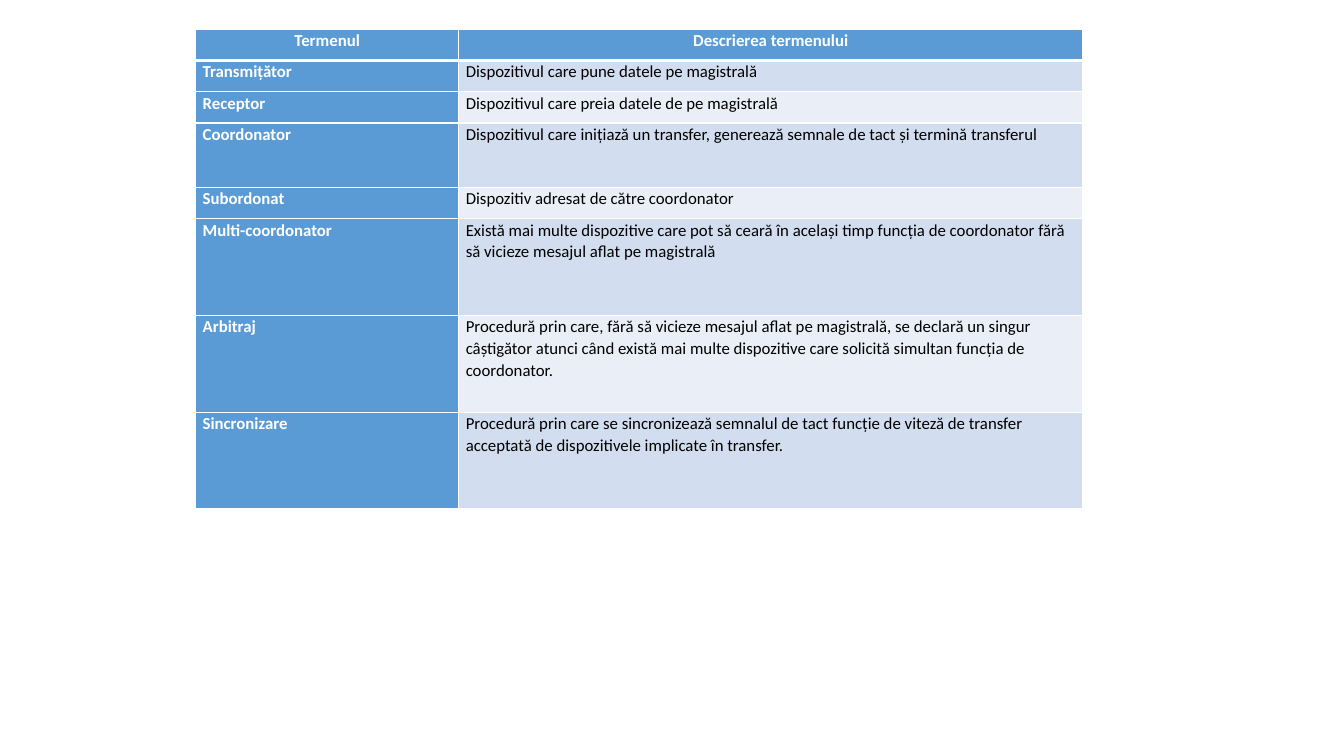
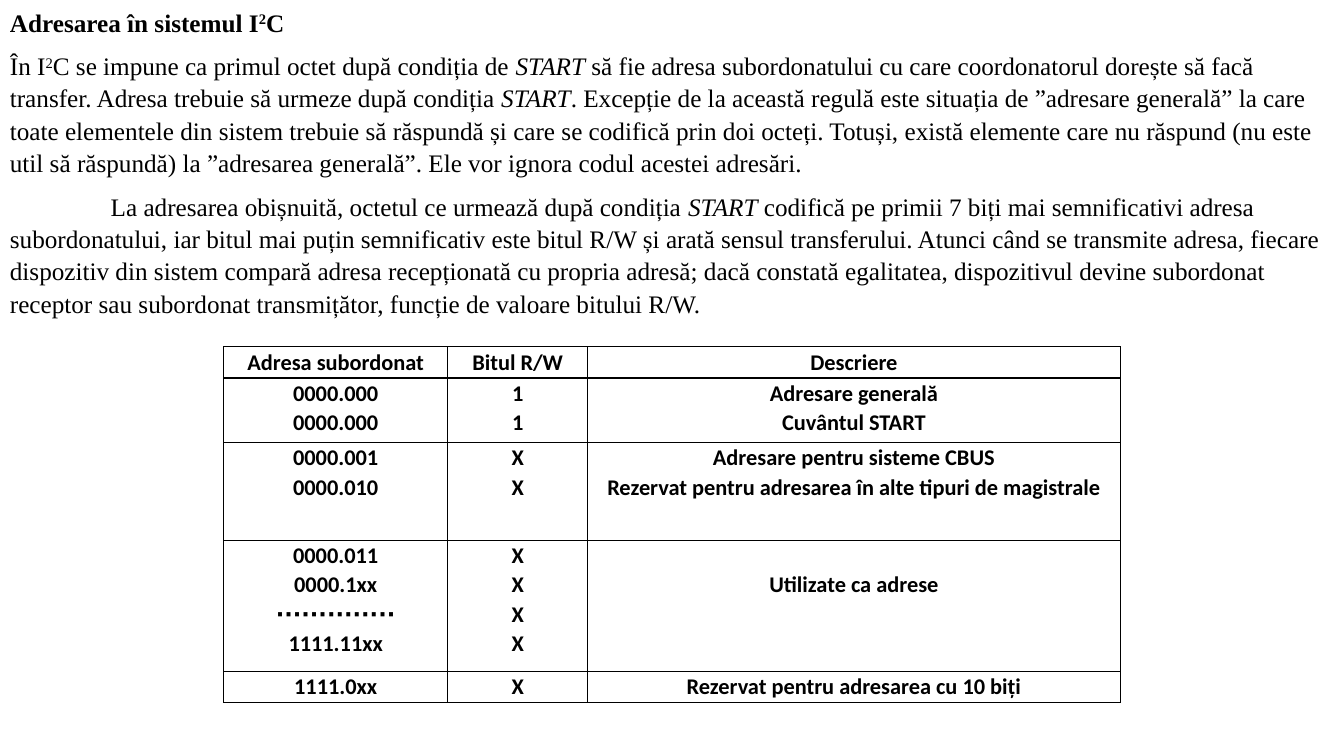
import dataclasses
import typing

import lxml.etree
import pptx
import pptx.dml.color
import pptx.enum.text
import pptx.oxml.ns
import pptx.util

Inches = pptx.util.Inches
Pt = pptx.util.Pt
CENTER = pptx.enum.text.PP_ALIGN.CENTER
LEFT = pptx.enum.text.PP_ALIGN.LEFT

COLORS = {
    "black": "000000",
    "white": "FFFFFF",
    "header": "5B9BD5",
    "band_dark": "D2DEEF",
    "band_light": "EAEFF7",
}
LINE_SPACING = 1.07
PROSE = {"name": "Times New Roman", "size": Pt(18)}
TERM_FONT = {"name": "Calibri", "size": Pt(12)}
ADDRESS_FONT = {"name": "Calibri", "size": Pt(16), "bold": True}
CELL_MARGINS = {
    "margin_left": Inches(0.07),
    "margin_right": Inches(0.07),
    "margin_top": 0,
    "margin_bottom": 0,
}


@dataclasses.dataclass(frozen=True)
class Span:
    text: str
    italic: bool = False
    raised: bool = False


@dataclasses.dataclass(frozen=True)
class Row:
    height: float
    cells: tuple[str, ...]


TERMS = (
    Row(0.31, ("Termenul", "Descrierea termenului")),
    Row(0.31, ("Transmițător", "Dispozitivul care pune datele pe magistrală")),
    Row(0.31, ("Receptor", "Dispozitivul care preia datele de pe magistrală")),
    Row(0.64, ("Coordonator", "Dispozitivul care inițiază un transfer, generează "
               "semnale de tact și termină transferul")),
    Row(0.31, ("Subordonat", "Dispozitiv adresat de către coordonator")),
    Row(0.96, ("Multi-coordonator", "Există mai multe dispozitive care pot să ceară în "
               "același timp funcția de coordonator fără să vicieze mesajul aflat pe "
               "magistrală")),
    Row(0.96, ("Arbitraj", "Procedură prin care, fără să vicieze mesajul aflat pe "
               "magistrală, se declară un singur câștigător atunci când există mai multe "
               "dispozitive care solicită simultan funcția de coordonator.")),
    Row(0.96, ("Sincronizare", "Procedură prin care se sincronizează semnalul de tact "
               "funcție de viteză de transfer acceptată de dispozitivele implicate în "
               "transfer.")),
)

ADDRESSES = (
    Row(0.31, ("Adresa subordonat", "Bitul R/W", "Descriere")),
    Row(0.64, ("0000.000\n0000.000", "1\n1", "Adresare generală\nCuvântul START")),
    Row(0.97, ("0000.001\n0000.010", "X\nX", "Adresare pentru sisteme CBUS\n"
               "Rezervat pentru adresarea în alte tipuri de magistrale")),
    Row(1.3, ("0000.011\n0000.1xx\n∙∙∙∙∙∙∙∙∙∙∙∙∙∙\n1111.11xx", "X\nX\nX\nX",
              "Utilizate ca adrese")),
    Row(0.31, ("1111.0xx", "X", "Rezervat pentru adresarea cu 10 biți")),
)

SQUARED = Span("2", raised=True)
START = Span("START", italic=True)
HEADING = ((Span("Adresarea în sistemul I"), SQUARED, Span("C")),)
EXPLANATION = (
    (
        Span("În I"), SQUARED,
        Span("C se impune ca primul octet după condiția de "), START,
        Span(" să fie adresa subordonatului cu care coordonatorul dorește să facă "
             "transfer. Adresa trebuie să urmeze după condiția "), START,
        Span(". Excepție de la această regulă este situația de ”adresare generală” la "
             "care toate elementele din sistem trebuie să răspundă și care se codifică "
             "prin doi octeți. Totuși, există elemente care nu răspund (nu este util să "
             "răspundă) la ”adresarea generală”. Ele vor ignora codul acestei adresări."),
    ),
    (
        Span("La adresarea obișnuită, octetul ce urmează după condiția "), START,
        Span(" codifică pe primii 7 biți mai semnificativi adresa subordonatului, iar "
             "bitul mai puțin semnificativ este bitul R/W și arată sensul transferului. "
             "Atunci când se transmite adresa, fiecare dispozitiv din sistem compară "
             "adresa recepționată cu propria adresă; dacă constată egalitatea, "
             "dispozitivul devine subordonat receptor sau subordonat transmițător, "
             "funcție de valoare bitului R/W."),
    ),
)


def rgb(color: str) -> pptx.dml.color.RGBColor:
    return pptx.dml.color.RGBColor.from_string(COLORS[color])


def apply(target: typing.Any, values: dict[str, typing.Any]) -> None:
    for attribute, value in values.items():
        setattr(target, attribute, value)


def write(frame, paragraphs, font: dict, color: str = "black", align=LEFT,
          after: float = 0) -> None:
    """Fill a text frame with paragraphs, each a sequence of spans."""
    for index, spans in enumerate(paragraphs):
        paragraph = frame.paragraphs[0] if index == 0 else frame.add_paragraph()
        apply(paragraph, {"alignment": align, "line_spacing": LINE_SPACING,
                          "space_after": Pt(after)})
        for span in spans:
            run = paragraph.add_run()
            run.text = span.text
            apply(run.font, {**font, "italic": span.italic})
            run.font.color.rgb = rgb(color)
            if span.raised:
                run.font._element.set("baseline", "30000")


def set_borders(cell, color: str, top: float = 1, bottom: float = 1) -> None:
    properties = cell._tc.get_or_add_tcPr()
    widths = {"lnL": 1, "lnR": 1, "lnT": top, "lnB": bottom}
    qn = pptx.oxml.ns.qn
    for position, (side, width) in enumerate(widths.items()):
        line = lxml.etree.Element(qn(f"a:{side}"), w=str(Pt(width)))
        fill = lxml.etree.SubElement(line, qn("a:solidFill"))
        lxml.etree.SubElement(fill, qn("a:srgbClr"), val=COLORS[color])
        properties.insert(position, line)


def add_grid(slide, left: float, top: float, widths: tuple[float, ...],
             rows: tuple[Row, ...]):
    """Add a plain table with its row and column sizes set."""
    height = sum(row.height for row in rows)
    table = slide.shapes.add_table(
        len(rows), len(widths), Inches(left), Inches(top),
        Inches(sum(widths)), Inches(height)).table
    apply(table, {"first_row": False, "horz_banding": False})
    for column, width in zip(table.columns, widths):
        column.width = Inches(width)
    for table_row, row in zip(table.rows, rows):
        table_row.height = Inches(row.height)
        for cell in table_row.cells:
            apply(cell, CELL_MARGINS)
    return table


def add_prose(slide, top: float, width: float, height: float, paragraphs,
              font: dict, wrap: bool, after: float = 0):
    box = slide.shapes.add_textbox(0, Inches(top), Inches(width), Inches(height))
    frame = box.text_frame
    frame.word_wrap = wrap
    frame.auto_size = pptx.enum.text.MSO_AUTO_SIZE.SHAPE_TO_FIT_TEXT
    write(frame, paragraphs, font, after=after)
    return frame


def build_terms(slide) -> None:
    table = add_grid(slide, 1.94, 0.29, (2.61, 6.19), TERMS)
    for r, row in enumerate(TERMS):
        for c, text in enumerate(row.cells):
            cell = table.cell(r, c)
            heading = r == 0 or c == 0
            band = "band_dark" if r % 2 else "band_light"
            cell.fill.solid()
            cell.fill.fore_color.rgb = rgb("header" if heading else band)
            set_borders(cell, "white", top=3 if r == 1 else 1,
                        bottom=3 if r == 0 else 1)
            write(cell.text_frame, ((Span(text),),), {**TERM_FONT, "bold": heading},
                  "white" if heading else "black", LEFT if r else CENTER)


def build_addressing(slide) -> None:
    add_prose(slide, 0, 2.97, 0.43, HEADING, {**PROSE, "bold": True}, wrap=False)
    explanation = add_prose(slide, 0.43, 13.33, 2.81, EXPLANATION, PROSE,
                            wrap=True, after=8)
    indented = explanation.paragraphs[1]._p.get_or_add_pPr()
    indented.set("indent", str(Inches(1)))

    table = add_grid(slide, 2.22, 3.44, (2.22, 1.39, 5.28), ADDRESSES)
    for r, row in enumerate(ADDRESSES):
        for c, text in enumerate(row.cells):
            cell = table.cell(r, c)
            cell.fill.background()
            set_borders(cell, "black")
            lines = [(Span(line),) for line in text.split("\n")]
            write(cell.text_frame, lines, ADDRESS_FONT, align=CENTER)
    table.cell(3, 2).margin_top = Inches(0.29)


def main() -> None:
    deck = pptx.Presentation()
    apply(deck, {"slide_width": Inches(13.33), "slide_height": Inches(7.5)})
    for build in (build_terms, build_addressing):
        build(deck.slides.add_slide(deck.slide_layouts[6]))
    deck.save("out.pptx")


if __name__ == "__main__":
    main()
